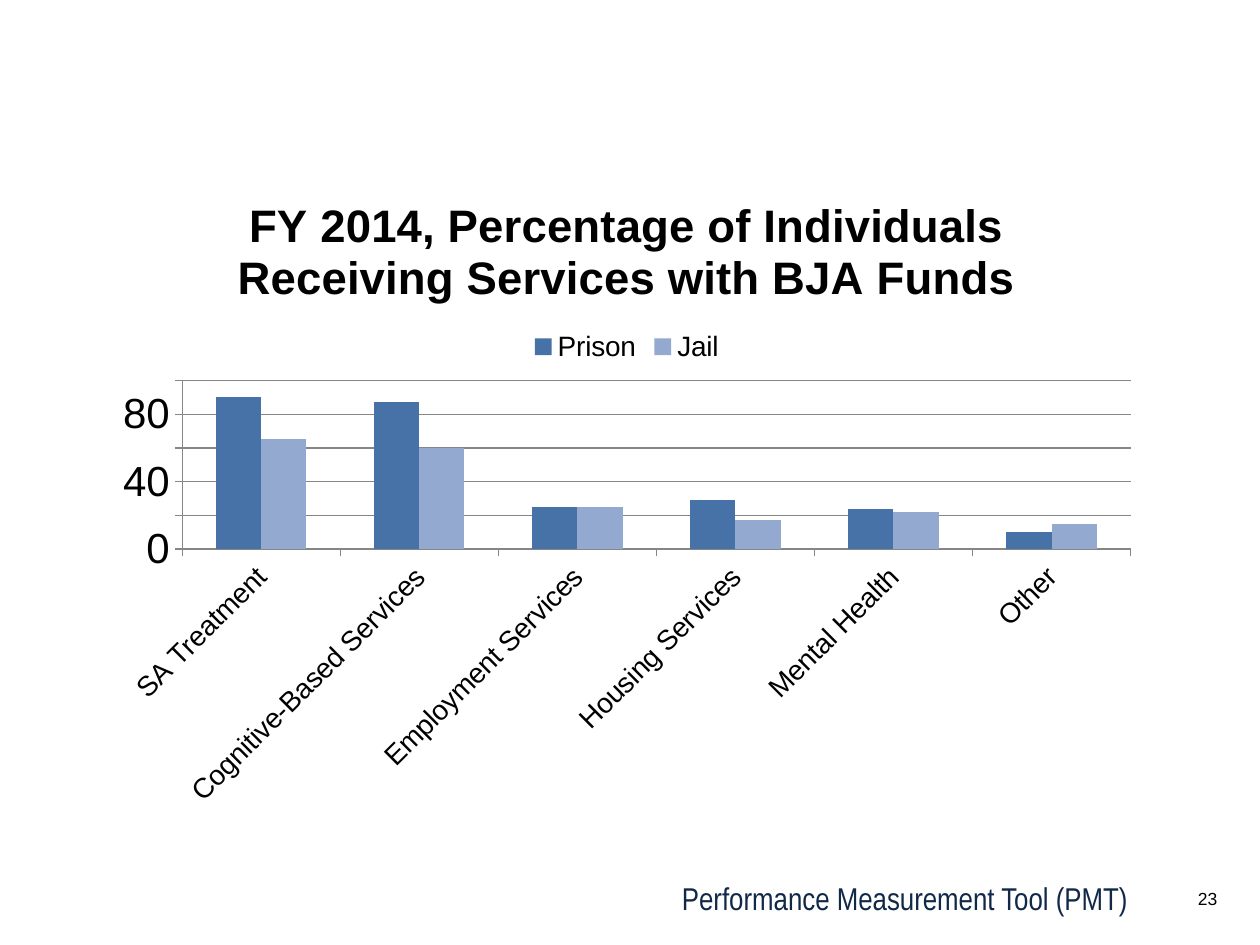
import dataclasses

import pptx
import pptx.chart.data
import pptx.dml.color
import pptx.enum.chart
import pptx.enum.text
import pptx.oxml.ns
import pptx.util
from pptx.util import Inches


@dataclasses.dataclass(frozen=True)
class Theme:
    font: str = "Arial"
    footer_font: str = "Arial Narrow"
    text: str = "000000"
    footer: str = "112947"
    axis: str = "868686"
    prison: str = "4672A8"
    jail: str = "93A9CF"
    title_size: int = 26
    value_size: int = 24
    footer_size: int = 18
    label_size: int = 16
    number_size: int = 10


THEME = Theme()
TITLE = "FY 2014, Percentage of Individuals Receiving Services with BJA Funds"
SERVICES = ["SA Treatment", "Cognitive-Based Services", "Employment Services",
            "Housing Services", "Mental Health", "Other"]
FACILITIES = [("Prison", [90, 87, 25, 29, 24, 10], THEME.prison),
              ("Jail", [65, 60, 25, 17, 22, 15], THEME.jail)]


def rgb(color):
    return pptx.dml.color.RGBColor.from_string(color)


def style_font(font, size, color=THEME.text, name=THEME.font, bold=False):
    font.size = pptx.util.Pt(size)
    font.name = name
    font.bold = bold
    font.color.rgb = rgb(color)


def add_label(slide, text, box, size, color, name, wrap):
    label = slide.shapes.add_textbox(*map(Inches, box))
    label.text_frame.word_wrap = wrap
    paragraph = label.text_frame.paragraphs[0]
    paragraph.alignment = pptx.enum.text.PP_ALIGN.RIGHT
    run = paragraph.add_run()
    run.text = text
    style_font(run.font, size, color, name)


def style_axis(axis, size):
    axis.major_tick_mark = pptx.enum.chart.XL_TICK_MARK.OUTSIDE
    axis.minor_tick_mark = pptx.enum.chart.XL_TICK_MARK.NONE
    axis.format.line.color.rgb = rgb(THEME.axis)
    style_font(axis.tick_labels.font, size)


def slant_labels(axis):
    body = axis._element.txPr.find(pptx.oxml.ns.qn("a:bodyPr"))
    body.set("rot", "-2700000")
    body.set("vert", "horz")


def add_services_chart(slide):
    data = pptx.chart.data.CategoryChartData(number_format="0")
    data.categories = SERVICES
    for name, percentages, _ in FACILITIES:
        data.add_series(name, percentages)
    chart = slide.shapes.add_chart(
        pptx.enum.chart.XL_CHART_TYPE.COLUMN_CLUSTERED,
        *map(Inches, (0.81, 1.33, 8.33, 5.17)), data).chart
    style_font(chart.font, THEME.number_size)

    chart.has_title = True
    heading = chart.chart_title.text_frame.paragraphs[0].add_run()
    heading.text = TITLE
    style_font(heading.font, THEME.title_size, bold=True)

    chart.has_legend = True
    chart.legend.position = pptx.enum.chart.XL_LEGEND_POSITION.TOP
    chart.legend.include_in_layout = False
    style_font(chart.legend.font, THEME.label_size)

    plot = chart.plots[0]
    plot.gap_width = 150
    plot.overlap = 0
    plot.vary_by_categories = False
    for series, (_, _, color) in zip(plot.series, FACILITIES):
        series.format.fill.solid()
        series.format.fill.fore_color.rgb = rgb(color)

    style_axis(chart.category_axis, THEME.label_size)
    slant_labels(chart.category_axis)

    percent = chart.value_axis
    style_axis(percent, THEME.value_size)
    percent.minimum_scale, percent.maximum_scale, percent.major_unit = 0, 100, 20
    percent.tick_labels.number_format = "0"
    percent.tick_labels.number_format_is_linked = False
    percent.has_major_gridlines = True
    percent.major_gridlines.format.line.color.rgb = rgb(THEME.axis)


def main():
    deck = pptx.Presentation()
    deck.slide_width, deck.slide_height = Inches(10), Inches(7.5)
    slide = deck.slides.add_slide(deck.slide_layouts[6])
    add_label(slide, "Performance Measurement Tool (PMT)", (4.17, 6.93, 4.88, 0.4),
              THEME.footer_size, THEME.footer, THEME.footer_font, True)
    add_label(slide, "23", (9.39, 7, 0.37, 0.27),
              THEME.number_size, THEME.text, THEME.font, False)
    add_services_chart(slide)
    deck.save("out.pptx")


if __name__ == "__main__":
    main()
